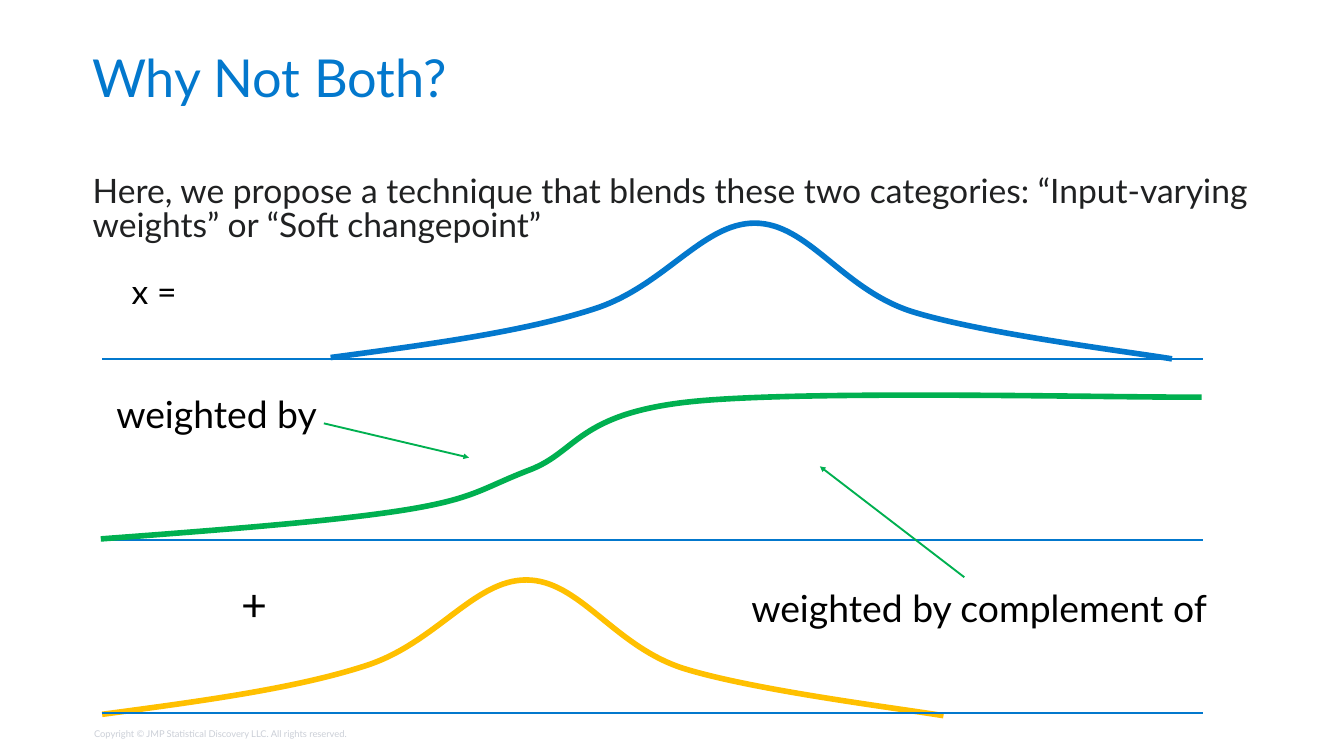
from lxml.etree import SubElement
from pptx import Presentation
from pptx.dml.color import RGBColor
from pptx.enum.shapes import MSO_CONNECTOR as Connector
from pptx.enum.text import MSO_ANCHOR as Anchor, MSO_AUTO_SIZE as AutoSize, PP_ALIGN as Align
from pptx.oxml.ns import qn
from pptx.util import Inches, Pt

BLUE = RGBColor(0x03, 0x78, 0xCD)
GREEN = RGBColor(0x00, 0xB0, 0x50)
GOLD = RGBColor(0xFF, 0xC0, 0x00)
INK = RGBColor(0x20, 0x21, 0x22)
BLACK = RGBColor(0, 0, 0)
PALE = RGBColor(0xCB, 0xCF, 0xD7)

AXIS_LEFT, AXIS_RIGHT = 1.52, 17.9
BELL_SIZE = (12.52, 2.02)
BELL_START = (0, 2)
BELL_CURVES = [
    [(1.43, 1.81), (2.86, 1.62), (3.91, 1.28)],
    [(4.96, 0.95), (5.53, 0), (6.31, 0)],
    [(7.1, 0), (7.6, 0.97), (8.63, 1.31)],
    [(9.67, 1.64), (11.85, 1.91), (12.52, 2.02)],
]
WEIGHT_SIZE = (16.38, 2.14)
WEIGHT_START = (0, 2.14)
WEIGHT_CURVES = [
    [(1.73, 2.01), (3.45, 1.88), (4.52, 1.71)],
    [(5.58, 1.54), (5.68, 1.38), (6.39, 1.11)],
    [(7.09, 0.84), (7.1, 0.28), (8.76, 0.1)],
    [(10.43, -0.08), (15.14, 0.04), (16.38, 0.03)],
]


class BlendSlide:
    font_name = "Lato"
    curve_width = Pt(6)
    line_width = Pt(2)

    def __init__(self, slide):
        self.slide = slide

    def _write(self, shape, text, size, color, spacing, anchor, wrap):
        frame = shape.text_frame
        frame.margin_left = frame.margin_right = 0
        frame.margin_top = frame.margin_bottom = 0
        frame.word_wrap = wrap
        frame.auto_size = AutoSize.NONE if wrap else AutoSize.SHAPE_TO_FIT_TEXT
        frame.vertical_anchor = anchor
        frame.text = text
        paragraph = frame.paragraphs[0]
        paragraph.alignment = Align.LEFT
        paragraph.line_spacing = spacing
        font = paragraph.font
        font.name, font.size = self.font_name, Pt(size)
        font.color.rgb = color

    def title(self, text, left, top, width, height):
        heading = self.slide.shapes.title
        heading.left, heading.top = Inches(left), Inches(top)
        heading.width, heading.height = Inches(width), Inches(height)
        self._write(heading, text, 56, BLUE, 0.9, Anchor.MIDDLE, True)

    def text(self, text, left, top, width, height, size, color=BLACK,
             spacing=1.0, anchor=Anchor.TOP, wrap=False):
        box = self.slide.shapes.add_textbox(
            Inches(left), Inches(top), Inches(width), Inches(height))
        self._write(box, text, size, color, spacing, anchor, wrap)

    def curve(self, left, top, size, start, segments, color):
        width, height = (Inches(length) for length in size)
        builder = self.slide.shapes.build_freeform(0, 0)
        builder.add_line_segments([(width, height)], close=False)
        outline = builder.convert_to_shape(Inches(left), Inches(top))
        trace = next(outline._element.iter(qn("a:path")))
        for step in list(trace):
            trace.remove(step)
        commands = [("a:moveTo", [start])]
        commands += [("a:cubicBezTo", segment) for segment in segments]
        for tag, points in commands:
            command = SubElement(trace, qn(tag))
            for x, y in points:
                SubElement(command, qn("a:pt"), x=str(Inches(x)), y=str(Inches(y)))
        outline.shadow.inherit = False
        outline.fill.background()
        outline.line.color.rgb = color
        outline.line.width = self.curve_width

    def line(self, start, end, color, arrow=False):
        connector = self.slide.shapes.add_connector(
            Connector.STRAIGHT, *(Inches(value) for value in (*start, *end)))
        connector.line.color.rgb = color
        connector.line.width = self.line_width
        if arrow:
            SubElement(connector.line._get_or_add_ln(), qn("a:tailEnd"), type="triangle")
        SubElement(connector._element.spPr, qn("a:effectLst"))

    def axis(self, y):
        self.line((AXIS_LEFT, y), (AXIS_RIGHT, y), BLUE)


def main():
    deck = Presentation()
    deck.slide_width, deck.slide_height = Inches(20), Inches(11.25)
    blend = BlendSlide(deck.slides.add_slide(deck.slide_layouts[5]))

    blend.title("Why Not Both?", 1.37, 0.78, 17.25, 0.85)
    blend.text("Here, we propose a technique that blends these two categories: "
               "“Input-varying weights” or “Soft changepoint”",
               1.38, 2.62, 17.25, 7.51, 36, INK, spacing=0.85, wrap=True)

    blend.curve(4.92, 3.32, BELL_SIZE, BELL_START, BELL_CURVES, BLUE)
    blend.curve(AXIS_LEFT, 8.63, BELL_SIZE, BELL_START, BELL_CURVES, GOLD)
    blend.text("x =", 1.96, 4.03, 0.79, 0.61, 36)
    blend.text("weighted by", 1.73, 5.82, 3.28, 0.67, 40)
    for axis_y in (10.61, 5.34):
        blend.axis(axis_y)
    blend.text("+", 3.59, 8.58, 0.54, 0.81, 48)
    blend.axis(8.04)
    blend.curve(1.5, 5.88, WEIGHT_SIZE, WEIGHT_START, WEIGHT_CURVES, GREEN)
    blend.text("weighted by complement of", 11.18, 8.71, 6.89, 0.67, 40)
    blend.line((4.82, 6.3), (6.98, 6.81), GREEN, arrow=True)
    blend.line((14.35, 8.59), (12.2, 6.94), GREEN, arrow=True)
    blend.text("Copyright © JMP Statistical Discovery LLC. All rights reserved.",
               1.4, 10.83, 5.4, 0.17, 10, PALE, anchor=Anchor.BOTTOM, wrap=True)

    deck.save("out.pptx")


if __name__ == "__main__":
    main()
